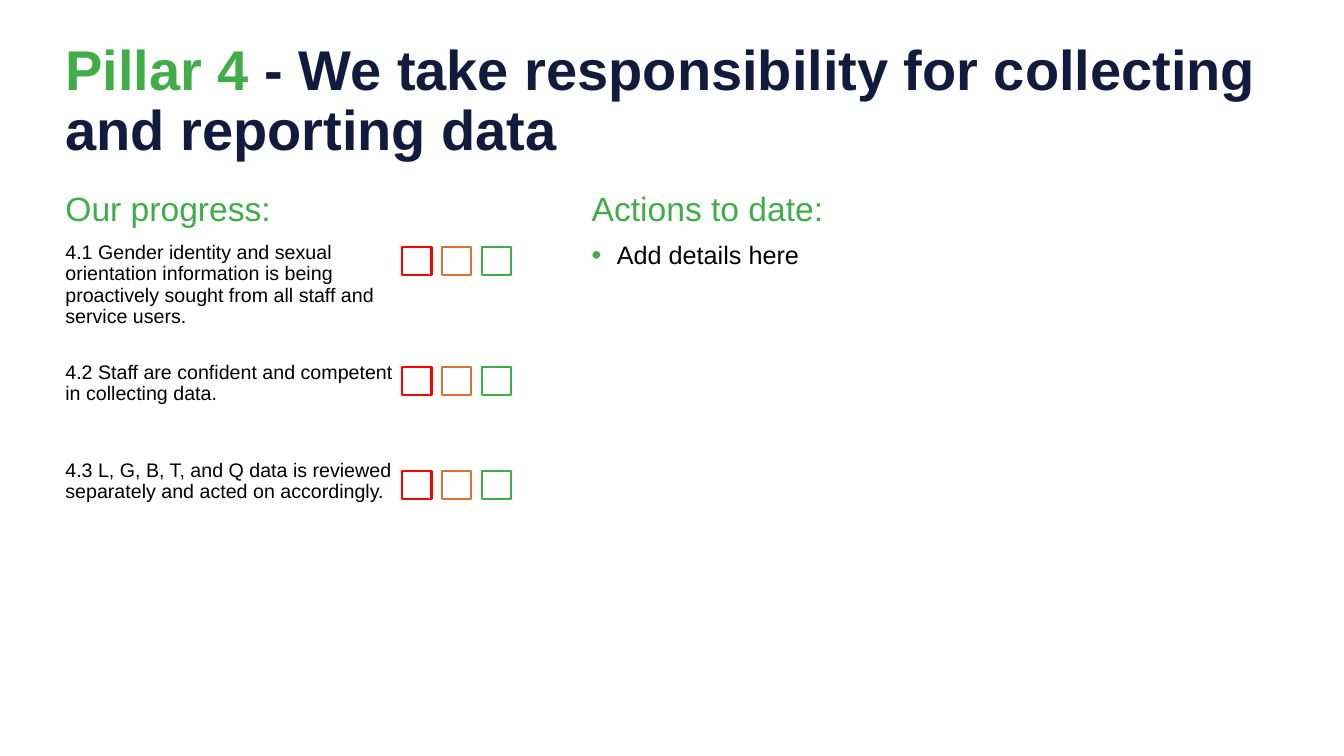
"""Build the Pillar 4 progress slide."""
from lxml import etree
from pptx import Presentation
from pptx import util as u
from pptx.dml.color import RGBColor
from pptx.enum import shapes, text
from pptx.oxml.ns import qn

THEME = {
    "font": "Arial",
    "green": "41AD49", "navy": "121A3D", "black": "000000",
    "red": "FF0000", "amber": "D87333",
    "title": 40, "head": 24, "body": 18, "small": 14, "line": 1.5,
}

TITLE = [("Pillar 4 ", "green"),
         ("- We take responsibility for collecting and reporting data", "navy")]
LEFT, RIGHT = "Our progress:", "Actions to date:"
ACTIONS = ["Add details here"]
GOALS = [
    {"top": 2.45, "gap": 10, "lines": (
        "4.1 Gender identity and sexual",
        "orientation information is being",
        "proactively sought from all staff and",
        "service users.")},
    {"top": 3.64, "gap": 25, "lines": (
        "4.2 Staff are confident and competent",
        "in collecting data.")},
    {"top": 4.67, "gap": 40, "lines": (
        "4.3 L, G, B, T, and Q data is reviewed",
        "separately and acted on accordingly.")},
]
LIGHTS = ("red", "amber", "green")
BOX = {"left": 3.99, "step": 0.395, "wide": 0.29, "high": 0.28}


def color(name):
    return RGBColor.from_string(THEME[name])


def add_box(slide, left, top, wide, high, anchor=text.MSO_ANCHOR.TOP):
    box = slide.shapes.add_textbox(*map(u.Inches, (left, top, wide, high)))
    frame = box.text_frame
    frame.word_wrap = True
    frame.vertical_anchor = anchor
    return frame


def add_run(para, words, size, hue, bold=False):
    run = para.add_run()
    run.text = words
    font = run.font
    font.name, font.size, font.bold = THEME["font"], u.Pt(THEME[size]), bold
    font.color.rgb = color(hue)


def set_para(para, gap):
    para.line_spacing = 0.9
    para.space_before = u.Pt(gap)
    return para


def add_bullet(para):
    props = para._p.get_or_add_pPr()
    props.set("marL", str(u.Inches(0.25)))
    props.set("indent", str(-u.Inches(0.25)))
    hue = etree.SubElement(props, qn("a:buClr"))
    etree.SubElement(hue, qn("a:srgbClr"), val=THEME["green"])
    etree.SubElement(props, qn("a:buSzPct"), val="110000")
    etree.SubElement(props, qn("a:buFont"), typeface=THEME["font"])
    etree.SubElement(props, qn("a:buChar"), char="•")


def add_panel(slide, left, wide, head):
    frame = add_box(slide, left, 1.86, wide, 4.95)
    add_run(set_para(frame.paragraphs[0], 10), head, "head", "green")
    return frame


def add_light(slide, left, top, hue):
    light = slide.shapes.add_shape(
        shapes.MSO_SHAPE.RECTANGLE,
        *map(u.Inches, (left, top, BOX["wide"], BOX["high"])))
    light.shadow.inherit = False
    light.fill.background()
    light.line.color.rgb = color(hue)
    light.line.width = u.Pt(THEME["line"])


def main():
    deck = Presentation()
    deck.slide_width, deck.slide_height = u.Inches(13.33), u.Inches(7.5)
    slide = deck.slides.add_slide(deck.slide_layouts[6])

    frame = add_panel(slide, 5.77, 6.6, RIGHT)
    for action in ACTIONS:
        para = set_para(frame.add_paragraph(), 10)
        add_bullet(para)
        add_run(para, action, "body", "black")

    frame = add_panel(slide, 0.55, 4.68, LEFT)
    for goal in GOALS:
        para = set_para(frame.add_paragraph(), goal["gap"])
        for row, line in enumerate(goal["lines"]):
            if row:
                para.add_line_break()
            add_run(para, line, "small", "black")
        for col, hue in enumerate(LIGHTS):
            add_light(slide, BOX["left"] + col * BOX["step"], goal["top"], hue)

    frame = add_box(slide, 0.55, 0.29, 12.08, 1.45, text.MSO_ANCHOR.MIDDLE)
    para = set_para(frame.paragraphs[0], 0)
    for words, hue in TITLE:
        add_run(para, words, "title", hue, True)

    deck.save("out.pptx")


if __name__ == "__main__":
    main()
